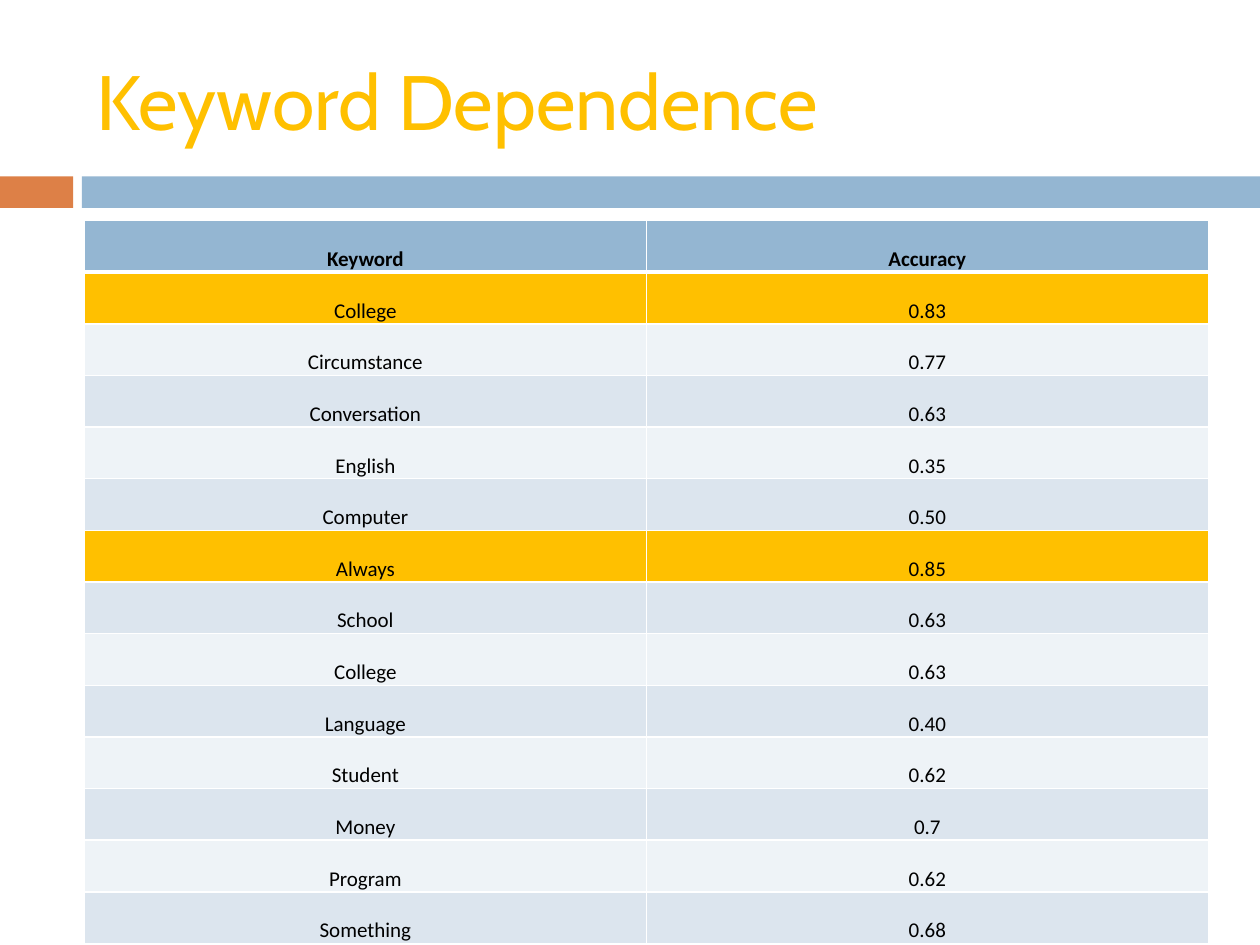
from lxml.etree import SubElement
from pptx import Presentation
from pptx.dml.color import RGBColor
from pptx.enum.shapes import MSO_SHAPE
from pptx.enum.text import MSO_ANCHOR, PP_ALIGN
from pptx.oxml.ns import qn
from pptx.util import Inches, Pt

TITLE = "Keyword Dependence"
HEADER = ("Keyword", "Accuracy")
RESULTS = [
    ("College", "0.83"),
    ("Circumstance", "0.77"),
    ("Conversation", "0.63"),
    ("English", "0.35"),
    ("Computer", "0.50"),
    ("Always", "0.85"),
    ("School", "0.63"),
    ("College", "0.63"),
    ("Language", "0.40"),
    ("Student", "0.62"),
    ("Money", "0.7"),
    ("Program", "0.62"),
    ("Something", "0.68"),
]
HIGHLIGHTED_ROWS = {1, 6}

THEME = {
    "accent": "DD8047",
    "header": "94B6D2",
    "highlight": "FFC000",
    "bands": ("EEF3F7", "DCE5EE"),
    "border": "FFFFFF",
    "text": "000000",
    "title_font": "Cabin",
    "title_size": 44,
    "table_font": "Calibri",
    "table_size": 12,
    "thin": 1,
    "thick": 3,
}

BAR_TOP, BAR_HEIGHT = 1.4, 0.25
BARS = [(0, 0.58, THEME["accent"]), (0.65, 9.35, THEME["header"])]
LEFT, WIDTH = 0.67, 8.92
TITLE_TOP, TITLE_HEIGHT = 0.25, 1.08
TABLE_TOP, ROW_HEIGHT = 1.75, 0.41


def apply_format(target, values):
    for name, value in values.items():
        setattr(target, name, value)


def write_text(paragraph, text, color, **font_values):
    run = paragraph.add_run()
    run.text = text
    apply_format(run.font, font_values)
    run.font.color.rgb = RGBColor.from_string(color)


def set_borders(cell, widths):
    properties = cell._tc.get_or_add_tcPr()
    for side in ("L", "R", "T", "B"):
        width = Pt(widths.get(side, THEME["thin"]))
        line = SubElement(properties, qn(f"a:ln{side}"), w=str(width))
        fill = SubElement(line, qn("a:solidFill"))
        SubElement(fill, qn("a:srgbClr"), val=THEME["border"])


def row_fill(row):
    if row == 0:
        return THEME["header"]
    if row in HIGHLIGHTED_ROWS:
        return THEME["highlight"]
    return THEME["bands"][row % 2]


def add_bars(slide):
    for left, width, color in BARS:
        shape = slide.shapes.add_shape(
            MSO_SHAPE.RECTANGLE,
            Inches(left), Inches(BAR_TOP), Inches(width), Inches(BAR_HEIGHT),
        )
        shape.shadow.inherit = False
        shape.fill.solid()
        shape.fill.fore_color.rgb = RGBColor.from_string(color)
        shape.line.fill.background()


def add_title(slide):
    title = slide.shapes.add_textbox(
        Inches(LEFT), Inches(TITLE_TOP), Inches(WIDTH), Inches(TITLE_HEIGHT)
    )
    apply_format(title.text_frame, {
        "word_wrap": True, "vertical_anchor": MSO_ANCHOR.MIDDLE,
    })
    write_text(
        title.text_frame.paragraphs[0], TITLE, THEME["highlight"],
        name=THEME["title_font"], size=Pt(THEME["title_size"]),
    )


def add_results(slide):
    rows = [HEADER, *RESULTS]
    table = slide.shapes.add_table(
        len(rows), len(HEADER),
        Inches(LEFT), Inches(TABLE_TOP), Inches(WIDTH), Inches(ROW_HEIGHT * len(rows)),
    ).table
    cell_format = {
        "vertical_anchor": MSO_ANCHOR.BOTTOM,
        "margin_left": Inches(0.07),
        "margin_right": Inches(0.07),
        "margin_top": 0,
        "margin_bottom": 0,
    }
    header_edge = {0: {"B": THEME["thick"]}, 1: {"T": THEME["thick"]}}
    for row, values in enumerate(rows):
        for column, text in enumerate(values):
            cell = table.cell(row, column)
            apply_format(cell, cell_format)
            set_borders(cell, header_edge.get(row, {}))
            cell.fill.solid()
            cell.fill.fore_color.rgb = RGBColor.from_string(row_fill(row))
            paragraph = cell.text_frame.paragraphs[0]
            apply_format(paragraph, {"alignment": PP_ALIGN.CENTER, "line_spacing": 1.5})
            write_text(
                paragraph, text, THEME["text"],
                name=THEME["table_font"], size=Pt(THEME["table_size"]), bold=row == 0,
            )


def main():
    presentation = Presentation()
    apply_format(presentation, {"slide_width": Inches(10), "slide_height": Inches(7.5)})
    slide = presentation.slides.add_slide(presentation.slide_layouts[6])
    add_bars(slide)
    add_title(slide)
    add_results(slide)
    presentation.save("out.pptx")


if __name__ == "__main__":
    main()
